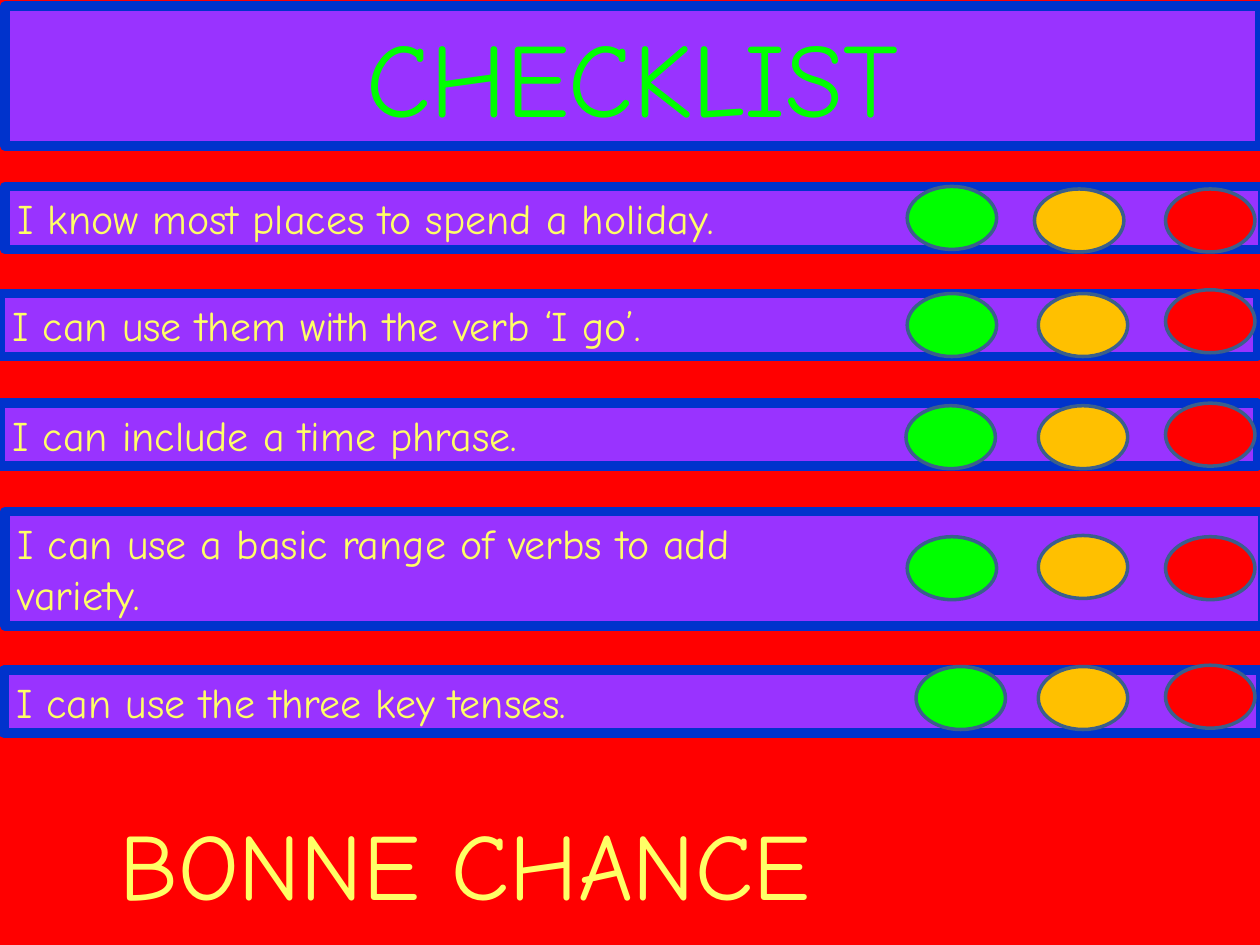
import pptx
import pptx.util
import pptx.dml.color
import pptx.enum.shapes
import pptx.enum.text
from dataclasses import dataclass

SCALE = 9144
SHAPE = pptx.enum.shapes.MSO_SHAPE
ALIGN = pptx.enum.text.PP_ALIGN


@dataclass(frozen=True)
class Theme:
    font: str = "Comic Neue"
    back: str = "FF0000"
    panel: str = "9933FF"
    edge: str = "0033CC"
    rim: str = "3A5F8C"
    green: str = "00FF00"
    amber: str = "FFC000"
    red: str = "FF0000"
    text: str = "FFFF66"
    title: int = 60
    body: int = 24
    wish: int = 54
    thick: float = 5.5
    thin: float = 2


def px(*sizes):
    return [pptx.util.Emu(size * SCALE) for size in sizes]


def tint(code):
    return pptx.dml.color.RGBColor.from_string(code)


def apply(target, values):
    for name, value in values.items():
        setattr(target, name, value)


class Board:
    def __init__(self, slide, theme):
        self.slide = slide
        self.theme = theme
        fill = slide.background.fill
        fill.solid()
        fill.fore_color.rgb = tint(theme.back)

    def shape(self, kind, box, fill, line, width):
        shape = self.slide.shapes.add_shape(kind, *px(*box))
        shape.shadow.inherit = False
        shape.fill.solid()
        shape.fill.fore_color.rgb = tint(fill)
        shape.line.color.rgb = tint(line)
        shape.line.width = pptx.util.Pt(width)
        return shape

    def letter(self, shape, text, size, color, align=ALIGN.LEFT):
        frame = shape.text_frame
        frame.text = text
        apply(frame, {
            "word_wrap": True,
            "auto_size": pptx.enum.text.MSO_AUTO_SIZE.SHAPE_TO_FIT_TEXT,
            "vertical_anchor": pptx.enum.text.MSO_ANCHOR.TOP,
        })
        for para in frame.paragraphs:
            para.alignment = align
            for run in para.runs:
                apply(run.font, {"name": self.theme.font, "size": pptx.util.Pt(size)})
                run.font.color.rgb = tint(color)

    def panel(self, box, text, size, color, align=ALIGN.LEFT):
        theme = self.theme
        shape = self.shape(SHAPE.RECTANGLE, box, theme.panel, theme.edge, theme.thick)
        self.letter(shape, text, size, color, align)

    def light(self, left, top, color):
        theme = self.theme
        self.shape(SHAPE.OVAL, (left, top, 71, 50), color, theme.rim, theme.thin)

    def label(self, box, text, size, color):
        shape = self.slide.shapes.add_textbox(*px(*box))
        self.letter(shape, text, size, color)


ROWS = [
    (4, 148, 50, "I know most places to spend a holiday.",
     [(720, 148), (821, 150), (925, 150)]),
    (0, 233, 50, "I can use them with the verb ‘I go’.",
     [(720, 233), (824, 233), (925, 230)]),
    (0, 320, 50, "I can include a time phrase.",
     [(719, 322), (824, 322), (925, 320)]),
    (4, 406, 91, "I can use a basic range of verbs to add\nvariety.",
     [(720, 426), (824, 425), (925, 426)]),
    (3, 532, 50, "I can use the three key tenses.",
     [(727, 529), (824, 529), (925, 528)]),
]


def main():
    deck = pptx.Presentation()
    width, height = px(1000, 750)
    apply(deck, {"slide_width": width, "slide_height": height})
    theme = Theme()
    board = Board(deck.slides.add_slide(deck.slide_layouts[6]), theme)
    board.panel((4, 5, 996, 111), "CHECKLIST", theme.title, theme.green, ALIGN.CENTER)
    colors = (theme.green, theme.amber, theme.red)
    for left, top, tall, text, spots in ROWS:
        board.panel((left, top, 998, tall), text, theme.body, theme.text)
        for spot, color in zip(spots, colors):
            board.light(*spot, color)
    board.label((85, 635, 677, 101), "BONNE CHANCE", theme.wish, theme.text)
    deck.save("out.pptx")


if __name__ == "__main__":
    main()
